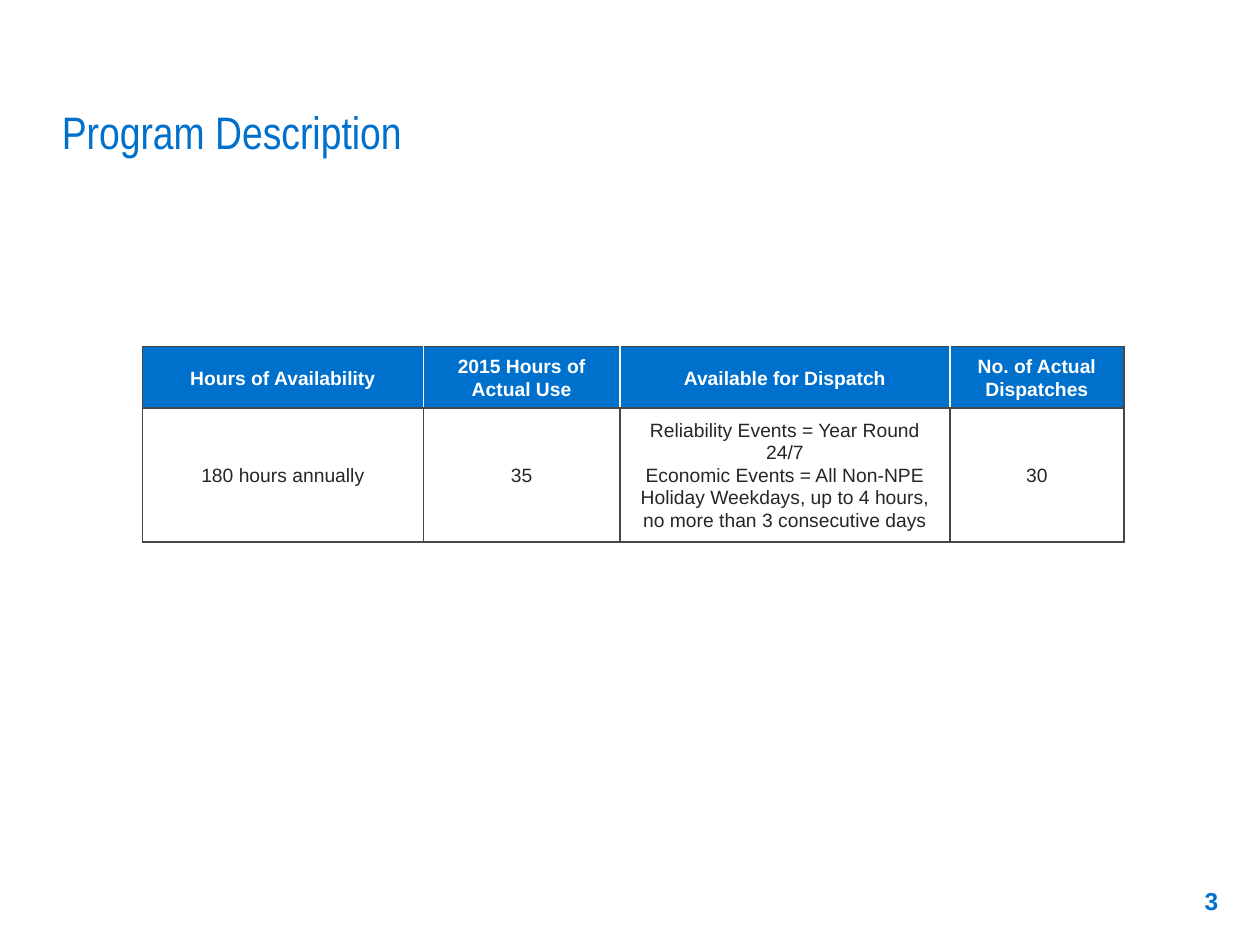
"""Build the Program Description slide with its availability table."""
from dataclasses import dataclass

import pptx
import pptx.dml.color
import pptx.enum.text
import pptx.oxml
import pptx.oxml.ns
import pptx.util

Inches = pptx.util.Inches
Pt = pptx.util.Pt
RGB = pptx.dml.color.RGBColor.from_string
ALIGN = pptx.enum.text.PP_ALIGN
ANCHOR = pptx.enum.text.MSO_ANCHOR


@dataclass(frozen=True)
class Theme:
    blue: str = "0070CD"
    white: str = "FFFFFF"
    ink: str = "262626"
    rule: str = "464749"
    font: str = "Arial"
    title_font: str = "Arial Narrow"
    title_size: float = 26
    table_size: float = 11
    number_size: float = 14


@dataclass(frozen=True)
class Column:
    heading: str
    width: float
    lines: tuple[str, ...]


THEME = Theme()
COLUMNS = (
    Column("Hours of Availability", 2.23, ("180 hours annually",)),
    Column("2015 Hours of Actual Use", 1.56, ("35",)),
    Column("Available for Dispatch", 2.62, (
        "Reliability Events = Year Round 24/7",
        "Economic Events = All Non-NPE Holiday Weekdays, "
        "up to 4 hours, no more than 3 consecutive days")),
    Column("No. of Actual Dispatches", 1.38, ("30",)),
)
ROW_HEIGHTS = (0.49, 0.99)


def write_text(tf, lines: tuple[str, ...], *, size: float, color: str,
               font: str = THEME.font, bold: bool = False,
               align=ALIGN.LEFT, spacing: float = 1.0) -> None:
    for i, line in enumerate(lines):
        p = tf.paragraphs[0] if i == 0 else tf.add_paragraph()
        p.alignment = align
        p.line_spacing = spacing
        r = p.add_run()
        r.text = line
        r.font.name = font
        r.font.size = Pt(size)
        r.font.bold = bold
        r.font.color.rgb = RGB(color)


def set_margins(box, left: float, top: float, right: float, bottom: float) -> None:
    box.margin_left, box.margin_top = Inches(left), Inches(top)
    box.margin_right, box.margin_bottom = Inches(right), Inches(bottom)


def add_text(slide, box: tuple[float, ...], text: str, *,
             margins: tuple[float, ...], anchor, **style) -> None:
    sp = slide.shapes.add_textbox(*map(Inches, box))
    tf = sp.text_frame
    tf.word_wrap = True
    tf.vertical_anchor = anchor
    set_margins(tf, *margins)
    write_text(tf, (text,), **style)


def set_borders(cell, left: str, right: str) -> None:
    tc_pr = cell._tc.get_or_add_tcPr()
    sides = {"L": left, "R": right, "T": THEME.rule, "B": THEME.rule}
    for side, color in sides.items():
        tc_pr.append(pptx.oxml.parse_xml(
            f'<a:ln{side} {pptx.oxml.ns.nsdecls("a")} w="{Pt(1)}">'
            f'<a:solidFill><a:srgbClr val="{color}"/></a:solidFill></a:ln{side}>'))


def add_availability_table(slide, left: float, top: float) -> None:
    width = sum(c.width for c in COLUMNS)
    frame = slide.shapes.add_table(
        len(ROW_HEIGHTS), len(COLUMNS), Inches(left), Inches(top),
        Inches(width), Inches(sum(ROW_HEIGHTS)))
    table = frame.table
    table.horz_banding = False
    for row, height in zip(table.rows, ROW_HEIGHTS):
        row.height = Inches(height)
    last = len(COLUMNS) - 1
    for i, column in enumerate(COLUMNS):
        table.columns[i].width = Inches(column.width)
        for j, lines in enumerate(((column.heading,), column.lines)):
            header = j == 0
            inner = THEME.white if header else THEME.rule
            cell = table.cell(j, i)
            cell.vertical_anchor = ANCHOR.MIDDLE
            set_margins(cell, *((0.07, 0.01, 0.07, 0) if header
                                else (0.1, 0.05, 0.1, 0.05)))
            set_borders(cell, THEME.rule if i == 0 else inner,
                        THEME.rule if i == last else inner)
            cell.fill.solid()
            cell.fill.fore_color.rgb = RGB(THEME.blue if header else THEME.white)
            write_text(cell.text_frame, lines, size=THEME.table_size,
                       color=THEME.white if header else THEME.ink,
                       bold=header, align=ALIGN.CENTER, spacing=1.05)


def main() -> None:
    prs = pptx.Presentation()
    prs.slide_width, prs.slide_height = Inches(10), Inches(7.5)
    slide = prs.slides.add_slide(prs.slide_layouts[6])
    add_text(slide, (0.49, 0.57, 9.01, 0.74), "Program Description",
             margins=(0, 0.05, 0.1, 0.05), anchor=ANCHOR.BOTTOM,
             size=THEME.title_size, color=THEME.blue, font=THEME.title_font)
    add_availability_table(slide, 1.13, 2.75)
    add_text(slide, (9.06, 6.95, 0.7, 0.4), "3",
             margins=(0.09, 0.04, 0.09, 0.04), anchor=ANCHOR.MIDDLE,
             size=THEME.number_size, color=THEME.blue, bold=True,
             align=ALIGN.RIGHT)
    prs.save("out.pptx")


if __name__ == "__main__":
    main()
